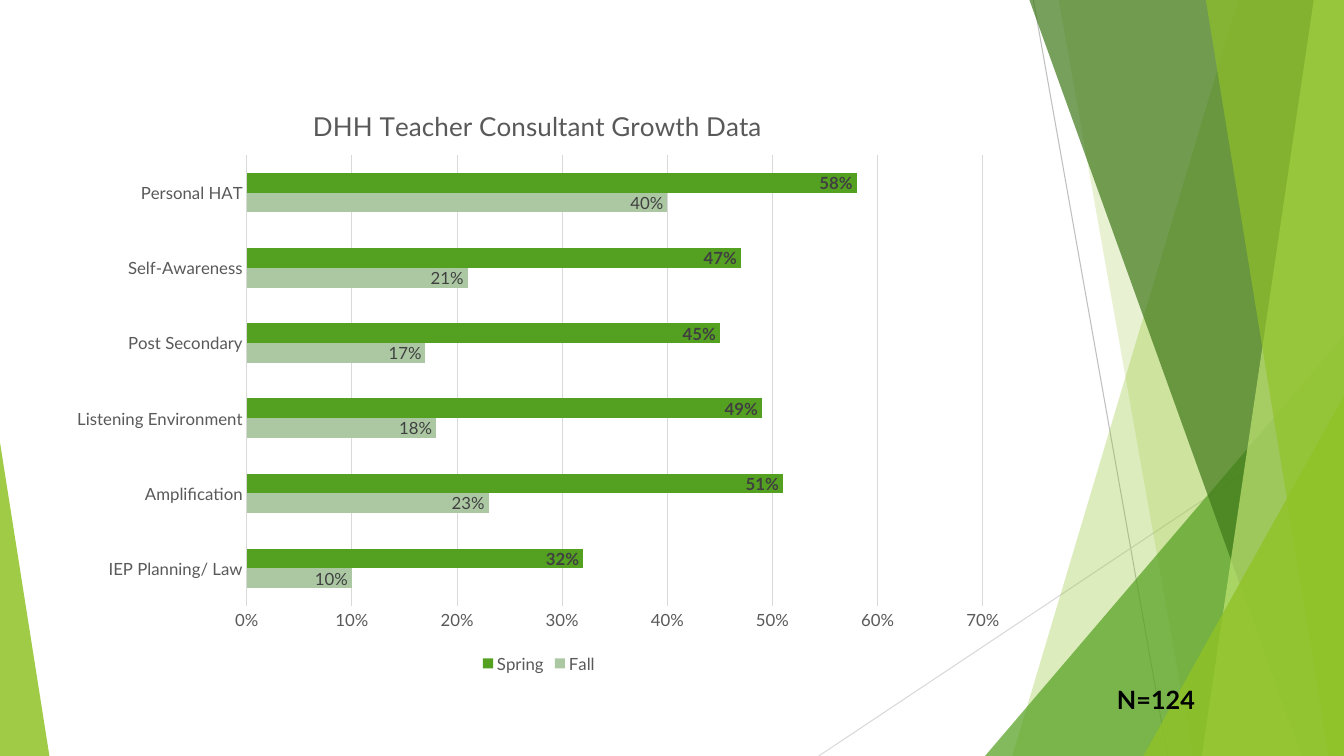
from dataclasses import dataclass

import pptx
import pptx.chart.data
import pptx.dml.color
import pptx.enum.chart
import pptx.enum.shapes
import pptx.oxml
import pptx.oxml.ns
import pptx.util
from lxml import etree

Inches = pptx.util.Inches
Pt = pptx.util.Pt
RGBColor = pptx.dml.color.RGBColor

WIDTH, HEIGHT = 13.33, 7.5
FONT = "Lato"
BLACK = RGBColor(0x00, 0x00, 0x00)
LABEL_GRAY = RGBColor(0x40, 0x40, 0x40)
AXIS_GRAY = RGBColor(0x59, 0x59, 0x59)
LINE_GRAY = RGBColor(0xBF, 0xBF, 0xBF)
GRID_GRAY = RGBColor(0xD9, 0xD9, 0xD9)
LIME = RGBColor(0x90, 0xC2, 0x26)
PALE_LIME = RGBColor(0xC0, 0xE4, 0x74)
GREEN = RGBColor(0x54, 0xA0, 0x21)
DARK_GREEN = RGBColor(0x3F, 0x78, 0x19)
SAGE = RGBColor(0xAB, 0xC8, 0xA3)


@dataclass
class Ray:
    start: tuple[float, float]
    end: tuple[float, float]
    color: RGBColor


@dataclass
class Band:
    """A panel with one slanted left side, reaching to the right slide edge."""
    top_x: float
    bottom_x: float
    color: RGBColor
    opacity: int


@dataclass
class Corner:
    """A right triangle standing on the bottom edge; apex 0 is left, 1 right."""
    left: float
    top: float
    width: float
    apex: float
    color: RGBColor
    opacity: int


@dataclass
class Season:
    name: str
    values: tuple[float, ...]
    color: RGBColor
    bold: bool


BACKDROP = [
    Ray((10.25, 0), (11.58, HEIGHT), LINE_GRAY),
    Ray((WIDTH, 4.03), (8.12, HEIGHT), GRID_GRAY),
    Band(12.28, 10.04, LIME, 30),
    Band(10.5, 11.83, LIME, 20),
    Corner(9.77, 3.33, 3.56, 1, GREEN, 72),
    Band(10.21, 12.91, DARK_GREEN, 70),
    Band(13.03, 11.92, PALE_LIME, 70),
    Band(11.96, 13.18, LIME, 65),
    Corner(11.34, 3.93, 1.99, 1, LIME, 80),
    Corner(0, 4.39, 0.49, 0, LIME, 85),
]
SKILLS = ["IEP Planning/ Law", "Amplification", "Listening Environment",
          "Post Secondary", "Self-Awareness", "Personal HAT"]
SEASONS = [
    Season("Fall", (0.10, 0.23, 0.18, 0.17, 0.21, 0.40), SAGE, False),
    Season("Spring", (0.32, 0.51, 0.49, 0.45, 0.47, 0.58), GREEN, True),
]


def set_font(font, size: float, color: RGBColor, bold: bool = False) -> None:
    font.name = FONT
    font.size = Pt(size)
    font.bold = bold
    font.color.rgb = color


def set_line(line, color: RGBColor) -> None:
    line.color.rgb = color
    line.width = Pt(0.75)


def tint(shape, color: RGBColor, opacity: int) -> None:
    shape.shadow.inherit = False
    shape.line.fill.background()
    shape.fill.solid()
    shape.fill.fore_color.rgb = color
    value = shape.fill._xPr.find(".//" + pptx.oxml.ns.qn("a:srgbClr"))
    alpha = etree.SubElement(value, pptx.oxml.ns.qn("a:alpha"))
    alpha.set("val", str(opacity * 1000))


def draw_ray(page, ray: Ray) -> None:
    connector = page.shapes.add_connector(
        pptx.enum.shapes.MSO_CONNECTOR.STRAIGHT,
        *(Inches(value) for value in ray.start + ray.end))
    set_line(connector.line, ray.color)
    etree.SubElement(connector._element.spPr, pptx.oxml.ns.qn("a:effectLst"))


def draw_band(page, band: Band) -> None:
    outline = [(band.top_x, 0), (WIDTH, 0), (WIDTH, HEIGHT), (band.bottom_x, HEIGHT)]
    points = [(Inches(x), Inches(y)) for x, y in outline]
    builder = page.shapes.build_freeform(*points[0])
    builder.add_line_segments(points[1:], close=True)
    tint(builder.convert_to_shape(), band.color, band.opacity)


def draw_corner(page, corner: Corner) -> None:
    shape = page.shapes.add_shape(
        pptx.enum.shapes.MSO_SHAPE.ISOSCELES_TRIANGLE, Inches(corner.left),
        Inches(corner.top), Inches(corner.width), Inches(HEIGHT - corner.top))
    shape.adjustments[0] = corner.apex
    tint(shape, corner.color, corner.opacity)


def place(element, before: str, **fractions: float) -> None:
    """Fix a chart part at fractions of the chart's width and height."""
    for old in element.findall(pptx.oxml.ns.qn("c:layout")):
        element.remove(old)
    layout = etree.Element(pptx.oxml.ns.qn("c:layout"))
    manual = etree.SubElement(layout, pptx.oxml.ns.qn("c:manualLayout"))
    settings = {"xMode": "edge", "yMode": "edge", **fractions}
    if "w" in fractions:
        settings = {"layoutTarget": "inner", **settings}
    for name, value in settings.items():
        etree.SubElement(manual, pptx.oxml.ns.qn("c:" + name)).set("val", str(value))
    element.find(pptx.oxml.ns.qn(before)).addprevious(layout)


def draw_growth_chart(page) -> None:
    data = pptx.chart.data.CategoryChartData(number_format="0%")
    data.categories = SKILLS
    for season in SEASONS:
        data.add_series(season.name, season.values)
    chart = page.shapes.add_chart(
        pptx.enum.chart.XL_CHART_TYPE.BAR_CLUSTERED, Inches(0.58), Inches(0.78),
        Inches(9.53), Inches(5.94), data).chart
    set_font(chart.font, 10, BLACK)

    title = chart.chart_title
    title.text_frame.text = "DHH Teacher Consultant Growth Data"
    set_font(title.text_frame.paragraphs[0].font, 18.6, AXIS_GRAY)
    place(title._element, "c:overlay", x=0.26, y=0.04)

    chart.has_legend = True
    chart.legend.position = pptx.enum.chart.XL_LEGEND_POSITION.BOTTOM
    chart.legend.include_in_layout = False
    set_font(chart.legend.font, 12, AXIS_GRAY)

    for axis in (chart.category_axis, chart.value_axis):
        axis.major_tick_mark = pptx.enum.chart.XL_TICK_MARK.NONE
        set_font(axis.tick_labels.font, 12, AXIS_GRAY)
    set_line(chart.category_axis.format.line, GRID_GRAY)
    values = chart.value_axis
    values.minimum_scale, values.maximum_scale, values.major_unit = 0, 0.7, 0.1
    values.format.line.fill.background()
    set_line(values.major_gridlines.format.line, GRID_GRAY)
    values.tick_labels.number_format = "0%"
    values.tick_labels.number_format_is_linked = False

    plot = chart.plots[0]
    plot.gap_width = 182
    plot.vary_by_categories = False
    place(plot._element.getparent(), "c:barChart", x=0.196, y=0.128, w=0.766, h=0.753)
    for series, season in zip(plot.series, SEASONS):
        series.format.fill.solid()
        series.format.fill.fore_color.rgb = season.color
        labels = series.data_labels
        labels.show_value = True
        labels.position = pptx.enum.chart.XL_LABEL_POSITION.INSIDE_END
        labels.number_format = "0%"
        labels.number_format_is_linked = False
        set_font(labels.font, 12, LABEL_GRAY, season.bold)


def draw_sample_size(page) -> None:
    box = page.shapes.add_textbox(Inches(10.98), Inches(6.74), Inches(1.18), Inches(0.4))
    box.text_frame.word_wrap = True
    para = box.text_frame.paragraphs[0]
    para.text = "N=124"
    set_font(para.font, 18, BLACK, True)


def main() -> None:
    deck = pptx.Presentation()
    deck.slide_width, deck.slide_height = Inches(WIDTH), Inches(HEIGHT)
    page = deck.slides.add_slide(deck.slide_layouts[6])
    painters = {Ray: draw_ray, Band: draw_band, Corner: draw_corner}
    for piece in BACKDROP:
        painters[type(piece)](page, piece)
    draw_growth_chart(page)
    draw_sample_size(page)
    deck.save("out.pptx")


if __name__ == "__main__":
    main()
